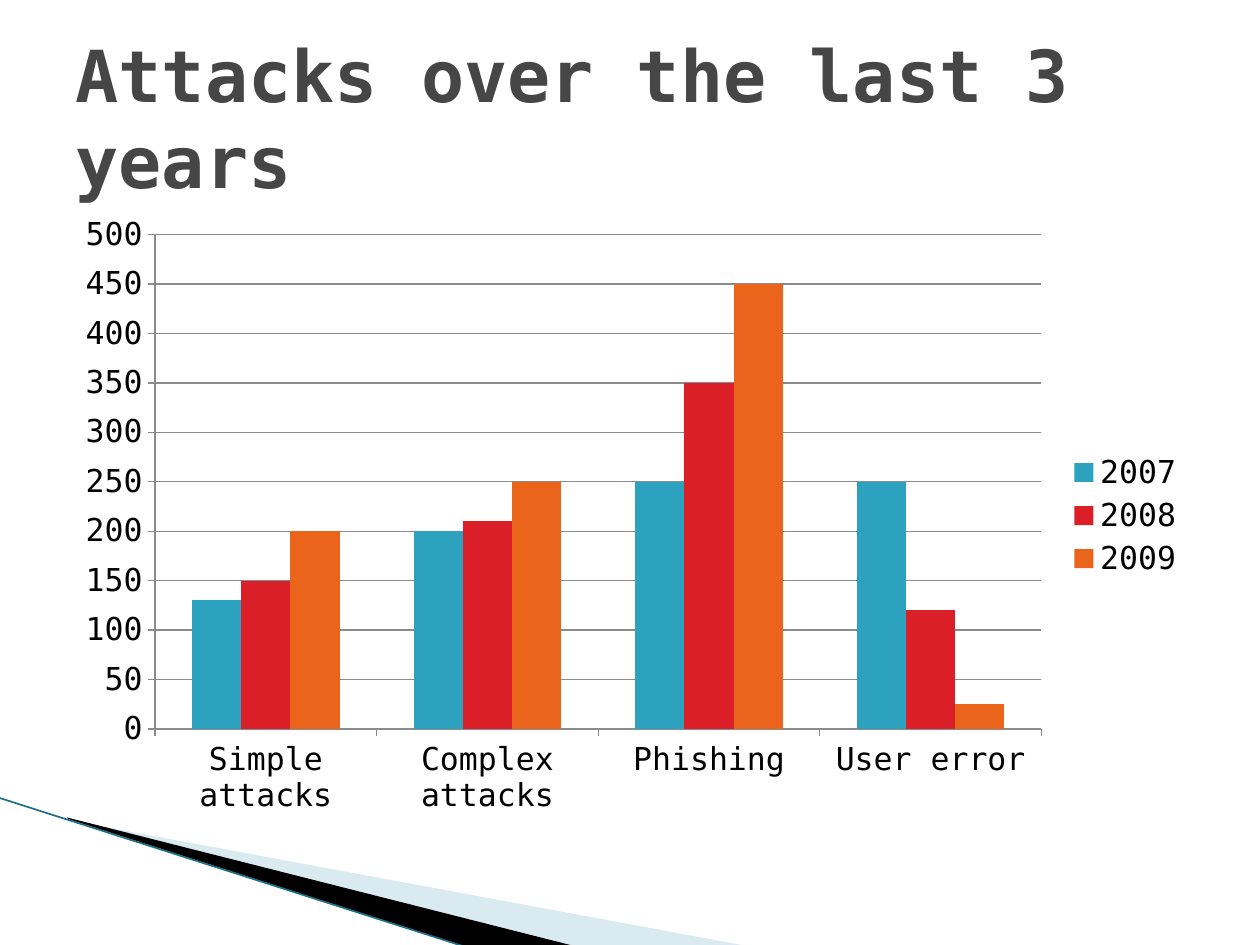
from lxml import etree
from pptx import Presentation
from pptx.chart.data import CategoryChartData
from pptx.dml.color import RGBColor
from pptx.enum.chart import XL_CHART_TYPE, XL_LEGEND_POSITION, XL_TICK_MARK
from pptx.enum.shapes import MSO_CONNECTOR
from pptx.enum.text import MSO_ANCHOR, MSO_AUTO_SIZE, PP_ALIGN
from pptx.oxml.ns import qn
from pptx.util import Cm, Pt

COLUMNS = XL_CHART_TYPE.COLUMN_CLUSTERED
RIGHT = XL_LEGEND_POSITION.RIGHT
TICK_OUTSIDE = XL_TICK_MARK.OUTSIDE
STRAIGHT = MSO_CONNECTOR.STRAIGHT
MIDDLE = MSO_ANCHOR.MIDDLE
LEFT = PP_ALIGN.LEFT
NO_AUTOFIT = MSO_AUTO_SIZE.NONE
TITLE_ONLY = 5


def color(value):
    return RGBColor.from_string(value)


class SlideBuilder:
    font_name = "DejaVu Sans Mono"
    title_color = "464646"
    text_color = "000000"
    axis_color = "8B8B8B"

    def __init__(self, presentation):
        self.slide = presentation.slides.add_slide(presentation.slide_layouts[TITLE_ONLY])

    def set_font(self, font, size, font_color, bold=False):
        font.name = self.font_name
        font.size = Pt(size)
        font.bold = bold
        font.color.rgb = color(font_color)

    def title(self, text, left, top, width, height):
        shape = self.slide.shapes.title
        shape.left, shape.top = Cm(left), Cm(top)
        shape.width, shape.height = Cm(width), Cm(height)
        frame = shape.text_frame
        frame.text = text
        frame.word_wrap = True
        frame.auto_size = NO_AUTOFIT
        frame.vertical_anchor = MIDDLE
        paragraph = frame.paragraphs[0]
        paragraph.alignment = LEFT
        self.set_font(paragraph.font, 41, self.title_color, bold=True)

    def polygon(self, points, fill_color, opacity=100):
        start, *others = [(Cm(x), Cm(y)) for x, y in points]
        builder = self.slide.shapes.build_freeform(*start)
        builder.add_line_segments(others, close=True)
        shape = builder.convert_to_shape()
        shape.shadow.inherit = False
        shape.line.fill.background()
        shape.fill.solid()
        shape.fill.fore_color.rgb = color(fill_color)
        if opacity < 100:
            fill = shape.fill._xPr.find(qn("a:solidFill"))
            etree.SubElement(fill[0], qn("a:alpha"), val=str(opacity * 1000))

    def line(self, start, end, line_color, width):
        connector = self.slide.shapes.add_connector(
            STRAIGHT, *[Cm(value) for value in start + end])
        connector.line.color.rgb = color(line_color)
        connector.line.width = Pt(width)
        etree.SubElement(connector._element.spPr, qn("a:effectLst"))

    def axis_line(self, line):
        line.color.rgb = color(self.axis_color)
        line.width = Pt(0.75)

    def column_chart(self, categories, series, left, top, width, height):
        data = CategoryChartData()
        data.categories = categories
        for name, _, values in series:
            data.add_series(name, values)
        chart = self.slide.shapes.add_chart(
            COLUMNS, Cm(left), Cm(top), Cm(width), Cm(height), data).chart
        self.set_font(chart.font, 18, self.text_color)
        chart.has_title = False
        chart.has_legend = True
        chart.legend.position = RIGHT
        chart.legend.include_in_layout = False
        plot = chart.plots[0]
        plot.gap_width = 150
        plot.vary_by_categories = False
        for column, (_, fill_color, _) in zip(plot.series, series):
            column.format.fill.solid()
            column.format.fill.fore_color.rgb = color(fill_color)
        for axis in (chart.category_axis, chart.value_axis):
            axis.major_tick_mark = TICK_OUTSIDE
            self.axis_line(axis.format.line)
        value_axis = chart.value_axis
        value_axis.minimum_scale, value_axis.maximum_scale = 0, 500
        value_axis.major_unit = 50
        value_axis.has_major_gridlines = True
        self.axis_line(value_axis.major_gridlines.format.line)


def main():
    presentation = Presentation()
    presentation.slide_width, presentation.slide_height = Cm(25.4), Cm(19.05)
    builder = SlideBuilder(presentation)
    builder.polygon([(1.4, 16.54), (15.11, 19.08), (11.58, 19.08), (1.4, 16.51)],
                    "A0CBDC", opacity=40)
    builder.polygon([(1.35, 16.48), (11.61, 19.08), (9.45, 19.1), (1.37, 16.51)], "000000")
    builder.line((-0.03, 16.08), (9.42, 19.1), "1B7088", 0.95)
    builder.column_chart(
        ["Simple attacks", "Complex attacks", "Phishing", "User error"],
        [("2007", "2DA2BF", (130, 200, 250, 250)),
         ("2008", "DA1F28", (150, 210, 350, 120)),
         ("2009", "EB641B", (200, 250, 450, 25))],
        1.27, 4.11, 22.86, 12.57)
    builder.title("Attacks over the last 3 years", 1.27, 0.76, 22.86, 3.18)
    presentation.save("out.pptx")


if __name__ == "__main__":
    main()
